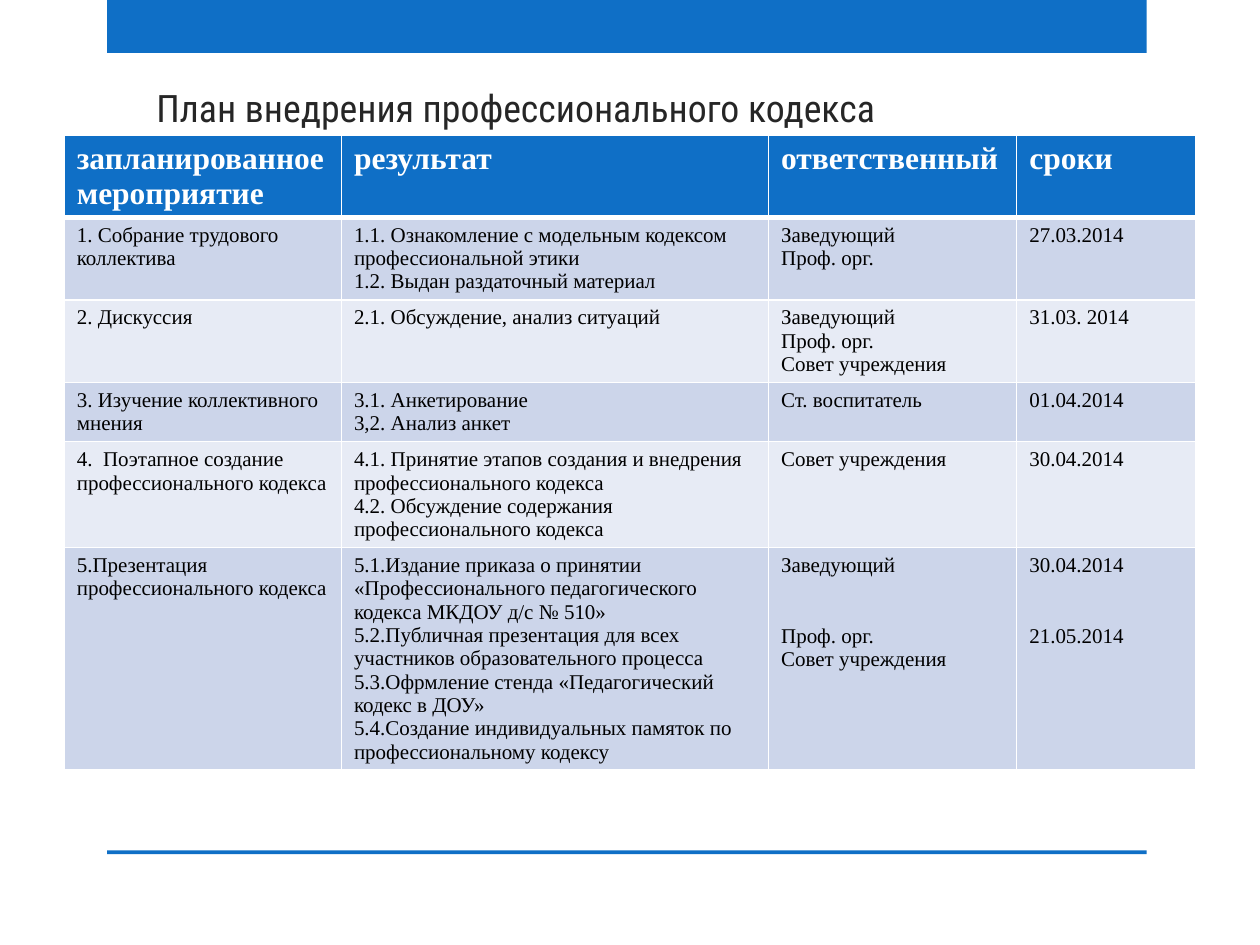
from dataclasses import dataclass

from lxml import etree
from pptx import Presentation
from pptx import util as u
from pptx.dml.color import RGBColor
from pptx.enum import shapes, text
from pptx.oxml import ns


@dataclass(frozen=True)
class Theme:
    accent: str = "0F6FC6"
    title: str = "262626"
    body: str = "000000"
    white: str = "FFFFFF"
    bands: tuple = ("CCD5EA", "E7EBF5")
    title_font: str = "Roboto Condensed"
    table_font: str = "Times New Roman"
    title_size: float = 21.6
    header_size: float = 18
    body_size: float = 12
    gap: float = 27  # space before a paragraph set apart, two lines high


# A paragraph that starts with this mark is set apart from the one above
APART = "^"

TITLE = "План внедрения профессионального кодекса"
HEADERS = ["запланированное мероприятие", "результат", "ответственный", "сроки"]
PLAN = [
    ["1. Собрание трудового коллектива",
     "1.1. Ознакомление с модельным кодексом профессиональной этики\n"
     "1.2. Выдан раздаточный материал",
     "Заведующий\nПроф. орг.",
     "27.03.2014"],
    ["2. Дискуссия",
     "2.1. Обсуждение, анализ ситуаций",
     "Заведующий\nПроф. орг.\nСовет учреждения",
     "31.03. 2014"],
    ["3. Изучение коллективного мнения",
     "3.1. Анкетирование\n3,2. Анализ анкет",
     "Ст. воспитатель",
     "01.04.2014"],
    ["4.  Поэтапное создание профессионального кодекса",
     "4.1. Принятие этапов создания и внедрения профессионального кодекса\n"
     "4.2. Обсуждение содержания профессионального кодекса",
     "Совет учреждения",
     "30.04.2014"],
    ["5.Презентация профессионального кодекса",
     "5.1.Издание приказа о принятии «Профессионального педагогического "
     "кодекса МКДОУ д/с № 510»\n"
     "5.2.Публичная презентация для всех участников образовательного процесса\n"
     "5.3.Офрмление стенда «Педагогический кодекс в ДОУ»\n"
     "5.4.Создание индивидуальных памяток по профессиональному кодексу",
     "Заведующий\n^Проф. орг.\nСовет учреждения",
     "30.04.2014\n^21.05.2014"],
]
COLUMN_WIDTHS = [2.2, 3.39, 1.97, 1.42]
ROW_HEIGHT = 0.41  # minimum; rows grow with their text


class SlideBuilder:
    def __init__(self, slide, theme):
        self.slide = slide
        self.theme = theme

    def style_runs(self, paragraph, font, size, color, bold=False):
        for run in paragraph.runs:
            run.font.name = font
            run.font.size = u.Pt(size)
            run.font.bold = bold
            run.font.color.rgb = RGBColor.from_string(color)

    def bar(self, left, top, width, height):
        shape = self.slide.shapes.add_shape(
            shapes.MSO_SHAPE.RECTANGLE, *map(u.Inches, (left, top, width, height)))
        shape.shadow.inherit = False
        shape.fill.solid()
        shape.fill.fore_color.rgb = RGBColor.from_string(self.theme.accent)
        shape.line.fill.background()

    def title(self, content, left, top, width, height):
        shape = self.slide.shapes.title
        shape.left, shape.top, shape.width, shape.height = map(
            u.Inches, (left, top, width, height))
        frame = shape.text_frame
        frame.text = content
        frame.word_wrap = True
        frame.auto_size = text.MSO_AUTO_SIZE.NONE
        frame.vertical_anchor = text.MSO_ANCHOR.BOTTOM
        paragraph = frame.paragraphs[0]
        paragraph.alignment = text.PP_ALIGN.LEFT
        self.style_runs(paragraph, self.theme.title_font,
                        self.theme.title_size, self.theme.title)

    def borders(self, cell, bottom):
        properties = cell._tc.get_or_add_tcPr()
        widths = {"a:lnL": 1, "a:lnR": 1, "a:lnT": 1, "a:lnB": bottom}
        for index, (tag, width) in enumerate(widths.items()):
            line = etree.Element(ns.qn(tag), w=str(u.Pt(width)))
            fill = etree.SubElement(line, ns.qn("a:solidFill"))
            etree.SubElement(fill, ns.qn("a:srgbClr"), val=self.theme.white)
            properties.insert(index, line)

    def cell(self, cell, content, fill, size, color, bold=False, bottom=1):
        cell.fill.solid()
        cell.fill.fore_color.rgb = RGBColor.from_string(fill)
        self.borders(cell, bottom)
        cell.text_frame.text = content.replace(APART, "")
        for line, paragraph in zip(content.split("\n"), cell.text_frame.paragraphs):
            if line.startswith(APART):
                paragraph.space_before = u.Pt(self.theme.gap)
            self.style_runs(paragraph, self.theme.table_font, size, color, bold)

    def table(self, headers, rows, left, top, widths, row_height):
        theme = self.theme
        count = len(rows) + 1
        table = self.slide.shapes.add_table(
            count, len(headers), u.Inches(left), u.Inches(top),
            u.Inches(sum(widths)), u.Inches(row_height * count)).table
        for column, width in zip(table.columns, widths):
            column.width = u.Inches(width)
        for column, header in enumerate(headers):
            self.cell(table.cell(0, column), header, theme.accent,
                      theme.header_size, theme.white, bold=True, bottom=3)
        for number, row in enumerate(rows):
            band = theme.bands[number % len(theme.bands)]
            for column, content in enumerate(row):
                self.cell(table.cell(number + 1, column), content, band,
                          theme.body_size, theme.body)


def main():
    presentation = Presentation()
    presentation.slide_width = u.Inches(10)
    presentation.slide_height = u.Inches(7.5)
    title_only = presentation.slide_layouts[5]
    builder = SlideBuilder(presentation.slides.add_slide(title_only), Theme())

    # Top band and bottom rule
    builder.bar(0.85, 0, 8.25, 0.42)
    builder.bar(0.85, 6.75, 8.25, 0.03)

    # Title and plan
    builder.title(TITLE, 1.14, 0.21, 6.46, 0.87)
    builder.table(HEADERS, PLAN, 0.51, 1.07, COLUMN_WIDTHS, ROW_HEIGHT)

    presentation.save("out.pptx")


if __name__ == "__main__":
    main()
